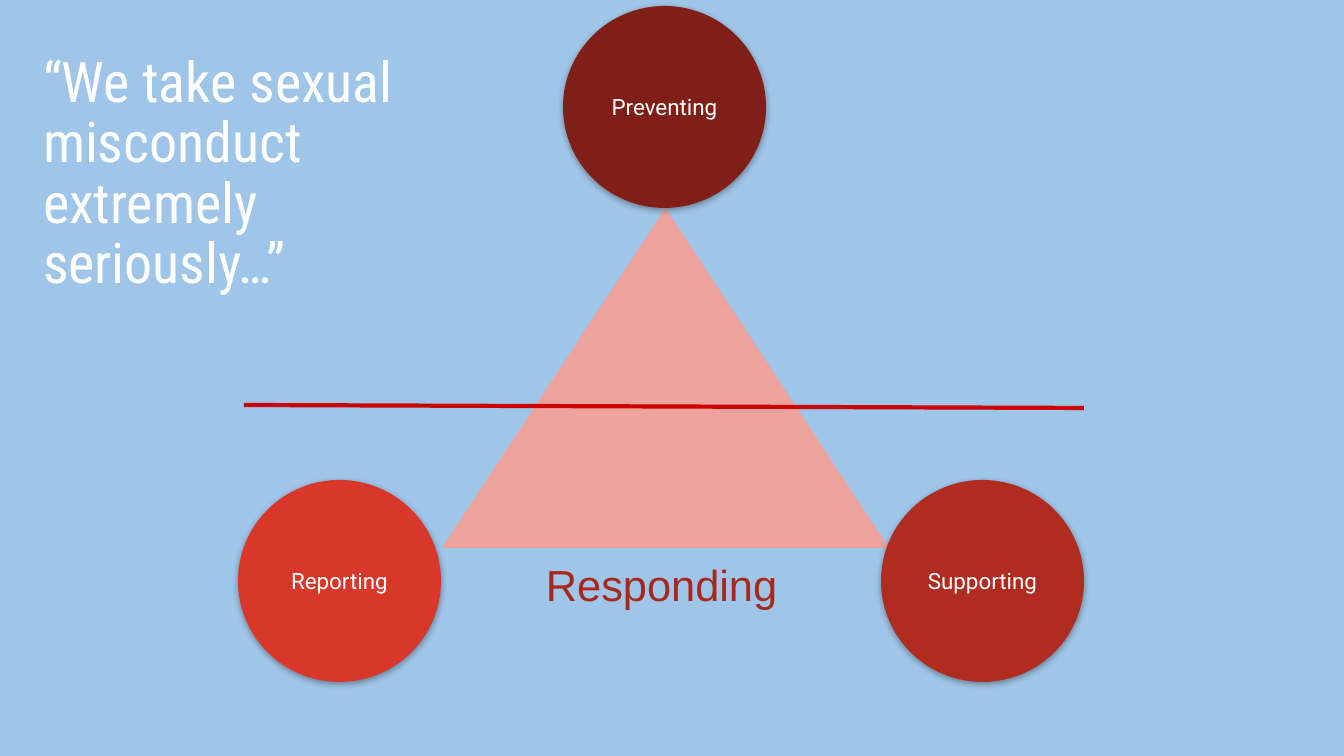
from lxml.etree import SubElement
from pptx import Presentation
from pptx.dml.color import RGBColor
from pptx.enum.shapes import MSO_CONNECTOR, MSO_SHAPE
from pptx.enum.text import MSO_ANCHOR, MSO_AUTO_SIZE, PP_ALIGN
from pptx.oxml import parse_xml
from pptx.oxml.ns import nsdecls, qn
from pptx.util import Pt

SLIDE_SIZE = (1344, 756)
PX = 12192000 / SLIDE_SIZE[0]

SKY = RGBColor(0x9F, 0xC5, 0xE8)
WHITE = RGBColor(0xFF, 0xFF, 0xFF)
PINK = RGBColor(0xED, 0xA2, 0x9B)
MAROON = RGBColor(0x80, 0x1F, 0x17)
BRICK = RGBColor(0xB0, 0x2B, 0x20)
RED = RGBColor(0xD8, 0x37, 0x29)
LINE_RED = RGBColor(0xCC, 0x00, 0x00)
CAPTION_RED = RGBColor(0xA7, 0x29, 0x1E)

TITLE = "“We take sexual misconduct extremely seriously…”"
TITLE_BOX = (33, 43, 486, 264)
CAPTION = "Responding"
CAPTION_BOX = (449, 548, 425, 129)
TRIANGLE_BOX = (442, 208, 447, 340)
DIVIDER = (244, 405, 1084, 408)
CIRCLE_SIZE = (203, 202)
CIRCLES = [
    ("Supporting", 881, 480, BRICK),
    ("Reporting", 238, 480, RED),
    ("Preventing", 563, 6, MAROON),
]
SHADOW = (
    f'<a:effectLst {nsdecls("a")}>'
    '<a:outerShdw blurRad="57150" dist="19050" dir="5400000" algn="bl" rotWithShape="0">'
    '<a:srgbClr val="212121"><a:alpha val="38000"/></a:srgbClr>'
    '</a:outerShdw></a:effectLst>'
)


def emu(*lengths):
    return [round(length * PX) for length in lengths]


def write(box, text, font_name, size, color, align, anchor, margins):
    """Fill a shape with one paragraph; margins are left, top, right, bottom in px."""
    frame = box.text_frame
    frame.text = text
    frame.word_wrap = True
    frame.auto_size = MSO_AUTO_SIZE.NONE
    frame.vertical_anchor = anchor
    (frame.margin_left, frame.margin_top,
     frame.margin_right, frame.margin_bottom) = emu(*margins)
    para = frame.paragraphs[0]
    para.alignment = align
    font = para.runs[0].font
    font.name = font_name
    font.size = Pt(size)
    font.color.rgb = color
    return para


def add_filled(page, kind, box, color):
    shape = page.shapes.add_shape(kind, *emu(*box))
    shape.shadow.inherit = False
    shape.fill.solid()
    shape.fill.fore_color.rgb = color
    shape.line.fill.background()
    return shape


def add_circle(page, label, left, top, color):
    circle = add_filled(page, MSO_SHAPE.OVAL, (left, top, *CIRCLE_SIZE), color)
    properties = circle.element.spPr
    properties.replace(properties.find(qn("a:effectLst")), parse_xml(SHADOW))
    write(circle, label, "Roboto", 16, WHITE, PP_ALIGN.CENTER, MSO_ANCHOR.MIDDLE, [13] * 4)


def add_divider(page):
    divider = page.shapes.add_connector(MSO_CONNECTOR.STRAIGHT, *emu(*DIVIDER))
    divider.line.color.rgb = LINE_RED
    divider.line.width = Pt(3)
    SubElement(divider.element.spPr, qn("a:effectLst"))


def main():
    deck = Presentation()
    deck.slide_width, deck.slide_height = emu(*SLIDE_SIZE)
    page = deck.slides.add_slide(deck.slide_layouts[5])
    page.background.fill.solid()
    page.background.fill.fore_color.rgb = SKY

    add_filled(page, MSO_SHAPE.ISOSCELES_TRIANGLE, TRIANGLE_BOX, PINK)
    for circle in CIRCLES:
        add_circle(page, *circle)
    add_divider(page)

    caption = page.shapes.add_textbox(*emu(*CAPTION_BOX))
    write(caption, CAPTION, "Arial", 31, CAPTION_RED, PP_ALIGN.CENTER, MSO_ANCHOR.TOP, [10] * 4)

    title = page.shapes.title
    title.left, title.top, title.width, title.height = emu(*TITLE_BOX)
    para = write(title, TITLE, "Roboto Condensed", 40, WHITE, PP_ALIGN.LEFT,
                 MSO_ANCHOR.MIDDLE, (10, 5, 15, 5))
    para.line_spacing = 0.9
    para.space_before = Pt(0)

    deck.save("out.pptx")


if __name__ == "__main__":
    main()
